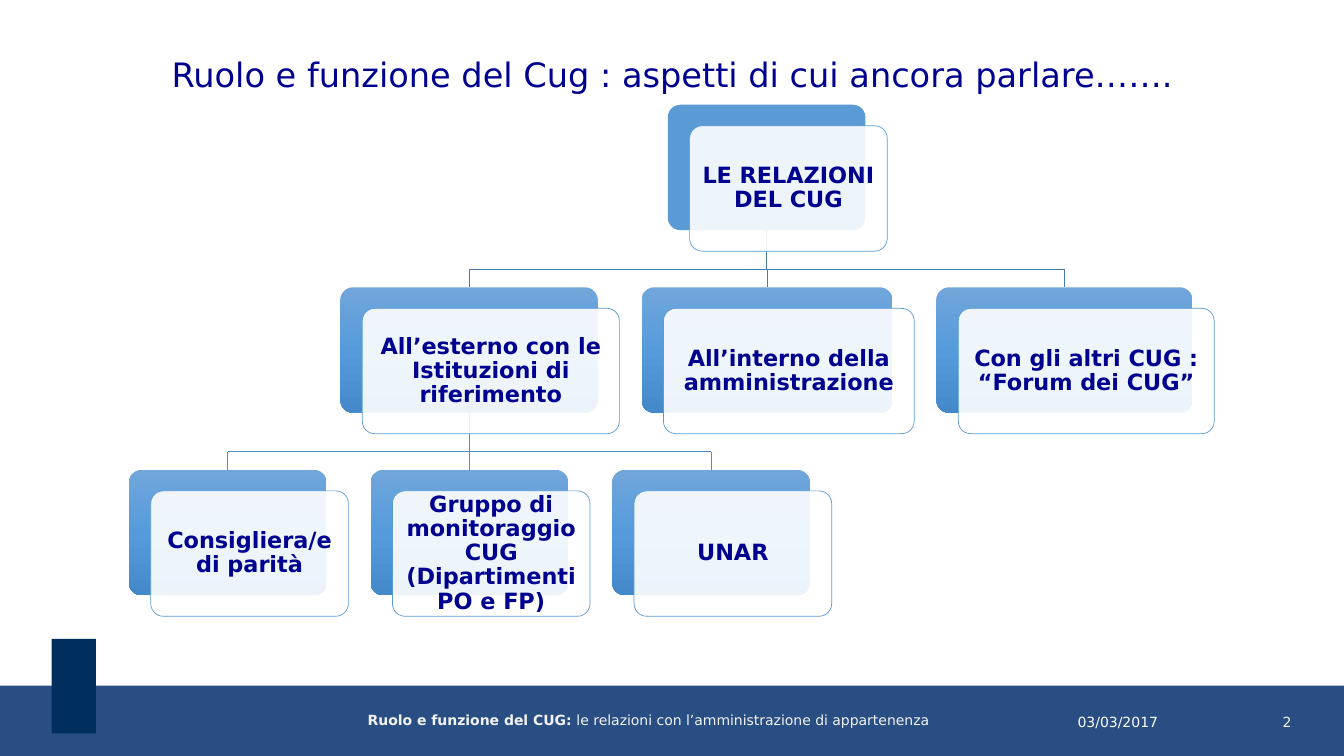
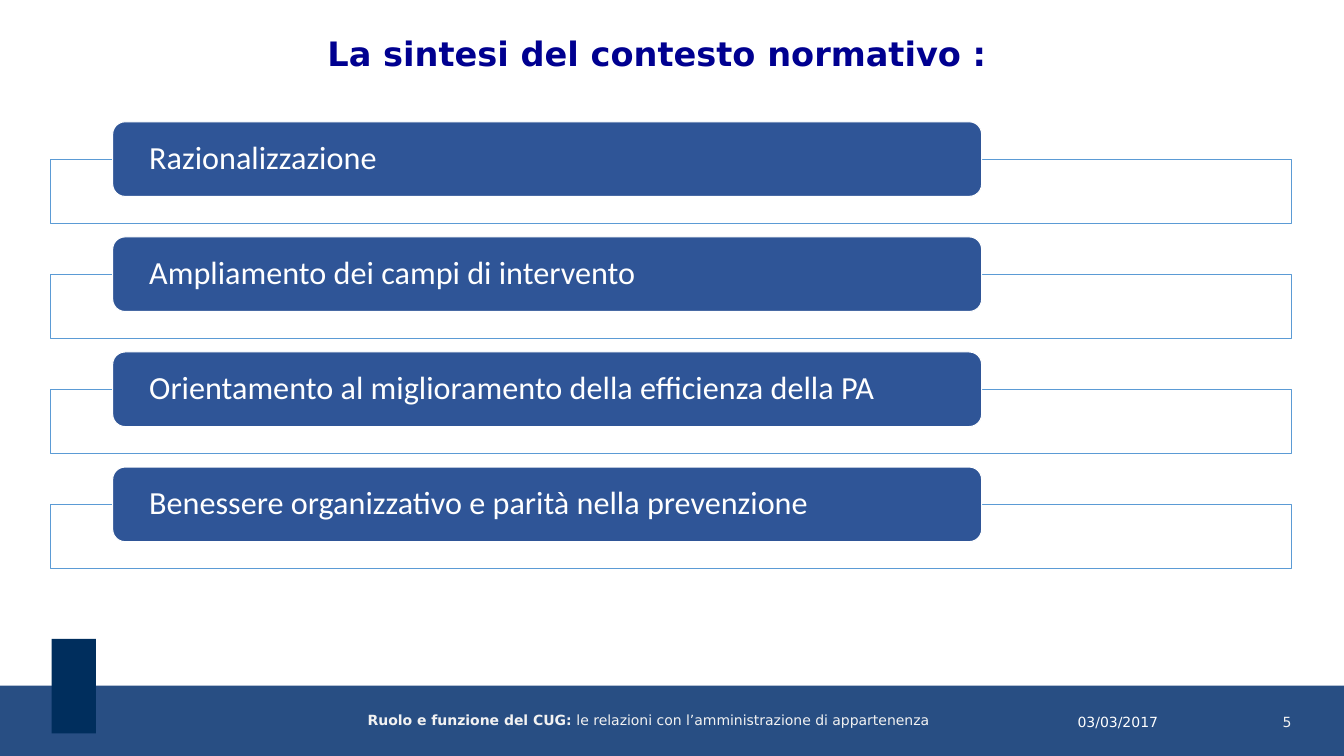
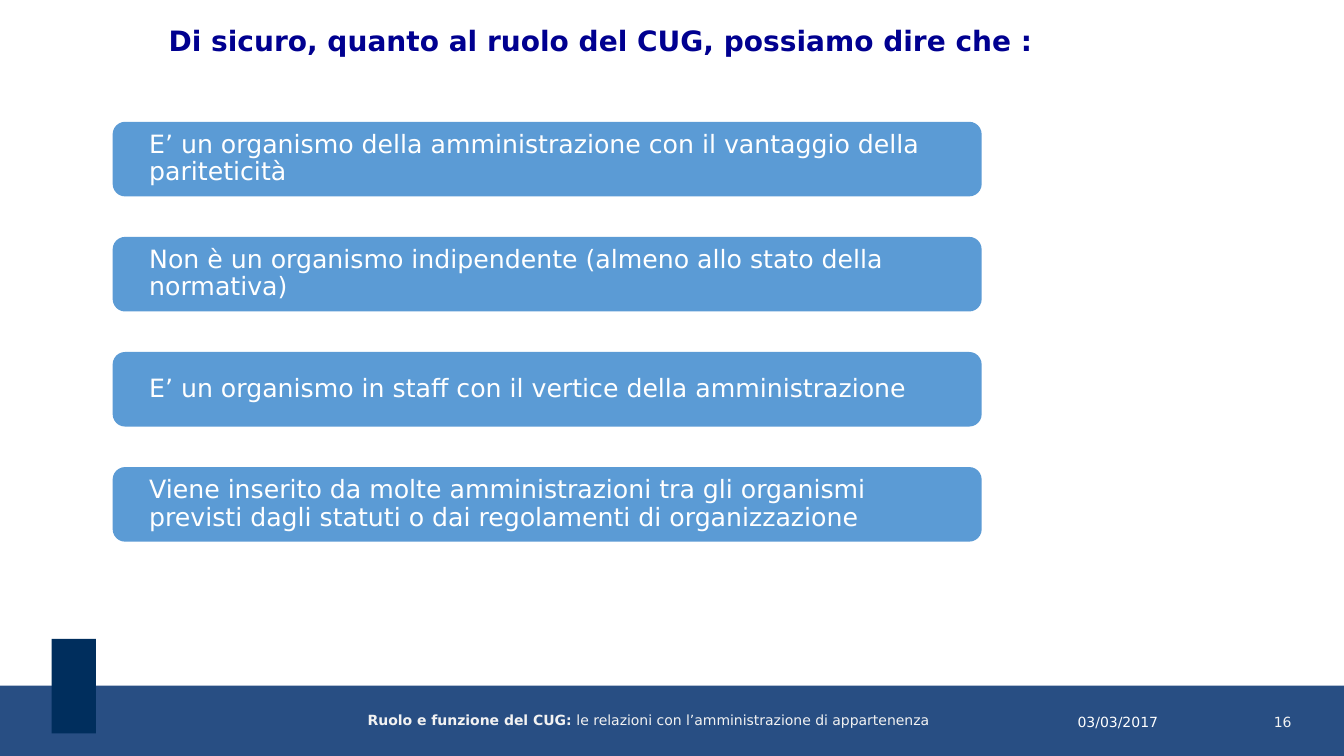
from copy import deepcopy
from dataclasses import dataclass

from lxml import etree
from pptx import Presentation
from pptx.dml.color import RGBColor
from pptx.enum.shapes import MSO_CONNECTOR, MSO_SHAPE
from pptx.enum.text import MSO_ANCHOR, MSO_AUTO_SIZE, PP_ALIGN
from pptx.oxml.ns import qn
from pptx.util import Cm, Pt

RECTANGLE, ROUNDED = MSO_SHAPE.RECTANGLE, MSO_SHAPE.ROUNDED_RECTANGLE
STRAIGHT = MSO_CONNECTOR.STRAIGHT
LEFT, CENTER, RIGHT = PP_ALIGN.LEFT, PP_ALIGN.CENTER, PP_ALIGN.RIGHT
TOP, MIDDLE = MSO_ANCHOR.TOP, MSO_ANCHOR.MIDDLE
NO_AUTOFIT = MSO_AUTO_SIZE.NONE

COLORS = {
    "band": "284E83",
    "marker": "002E5D",
    "title": "000090",
    "footer": "F2F2F2",
    "white": "FFFFFF",
    "blue": "5B9BD5",
    "navy": "2F5597",
    "upper_line": "497CAB",
    "lower_line": "538DC1",
    "card_top": "71A6DB",
    "card_middle": "559BDB",
    "card_bottom": "448ACA",
}
CARD_GRADIENT = ("card_top", "card_middle", "card_bottom")
FONT = "DejaVu Sans"

# Organisation chart, in centimetres
CHART_TOP, LEVEL_PITCH = 2.64, 4.6
CARD_HEIGHT, CARD_GAP, CARD_INSET = 3.16, 1.11, 0.16
CARD_SHIFT_X, CARD_SHIFT_Y = 0.55, 0.53
ELBOW_DROP = 0.98

# Bar list, in centimetres
BAR_LEFT, BAR_TOP, BAR_WIDTH, BAR_HEIGHT, BAR_PITCH = 2.84, 3.07, 21.9, 1.88, 2.9
BAR_INSET = 0.83
FRAME_LEFT, FRAME_SHIFT, FRAME_WIDTH, FRAME_HEIGHT = 1.27, 0.94, 31.27, 1.61


@dataclass(frozen=True)
class Box:
    left: float
    top: float
    width: float
    height: float

    @property
    def center(self) -> float:
        return self.left + self.width / 2

    @property
    def bottom(self) -> float:
        return self.top + self.height

    def lengths(self) -> tuple:
        return Cm(self.left), Cm(self.top), Cm(self.width), Cm(self.height)


@dataclass(frozen=True)
class Title:
    text: str
    box: Box
    size: int
    bold: bool = True
    top_inset: float = 0


@dataclass(frozen=True)
class Card:
    text: str
    width: float


@dataclass(frozen=True)
class BarStyle:
    fill: str
    font: str
    size: int
    outlined: bool


LEVELS = (
    (16.83, (Card("LE RELAZIONI DEL CUG", 4.98),)),
    (8.58, (
        Card("All’esterno con le Istituzioni di riferimento", 6.48),
        Card("All’interno della amministrazione", 6.32),
        Card("Con gli altri CUG : “Forum dei CUG”", 6.45),
    )),
    (3.25, (
        Card("Consigliera/e di parità", 4.98),
        Card("Gruppo di monitoraggio CUG (Dipartimenti PO e FP)", 4.98),
        Card("UNAR", 4.98),
    )),
)
CONTEXT = (
    "Razionalizzazione",
    "Ampliamento dei campi di intervento",
    "Orientamento al miglioramento della efficienza della PA",
    "Benessere organizzativo e parità nella prevenzione",
)
ROLE = (
    "E’ un organismo della amministrazione con il vantaggio della pariteticità",
    "Non è un organismo indipendente (almeno allo stato della normativa)",
    "E’ un organismo in staff con il vertice della amministrazione",
    "Viene inserito da molte amministrazioni tra gli organismi previsti dagli "
    "statuti o dai regolamenti di organizzazione",
)


def rgb(name: str) -> RGBColor:
    return RGBColor.from_string(COLORS[name])


def write(shape, text: str, *, size: float, color: str, font: str = FONT,
          bold: bool = False, align=CENTER, anchor=TOP, side: float = 0,
          top: float = 0, spacing: float = 1) -> None:
    """Append a run to the shape's paragraph and format its frame (insets in cm)."""
    frame = shape.text_frame
    frame.word_wrap = True
    frame.auto_size = NO_AUTOFIT
    frame.vertical_anchor = anchor
    frame.margin_left = frame.margin_right = Cm(side)
    frame.margin_top, frame.margin_bottom = Cm(top), 0
    paragraph = frame.paragraphs[0]
    paragraph.alignment = align
    paragraph.line_spacing = spacing
    paragraph.space_before = Pt(0)
    run = paragraph.add_run()
    run.text = text
    run.font.name, run.font.size, run.font.bold = font, Pt(size), bold
    run.font.color.rgb = rgb(color)


def place(shape, box: Box) -> None:
    shape.left, shape.top, shape.width, shape.height = box.lengths()


def add_panel(slide, kind, box: Box, *, fill: str, line: str = "",
              line_width: float = 0.5, opacity: int = 100):
    shape = slide.shapes.add_shape(kind, *box.lengths())
    shape.shadow.inherit = False
    shape.fill.solid()
    shape.fill.fore_color.rgb = rgb(fill)
    if opacity < 100:
        color = shape.element.spPr.find(qn("a:solidFill"))[0]
        etree.SubElement(color, qn("a:alpha"), val=str(opacity * 1000))
    if line:
        shape.line.color.rgb = rgb(line)
        shape.line.width = Pt(line_width)
    else:
        shape.line.fill.background()
    return shape


def apply_card_gradient(shape) -> None:
    shape.fill.gradient()
    shape.fill.gradient_angle = 270
    stop_list = shape.element.spPr.find(qn("a:gradFill")).find(qn("a:gsLst"))
    stop_list.insert(1, deepcopy(stop_list[0]))
    for index, (stop, name) in enumerate(zip(shape.fill.gradient_stops, CARD_GRADIENT)):
        stop.color.rgb = rgb(name)
        stop.position = index / 2


def add_line(slide, x1: float, y1: float, x2: float, y2: float, color: str) -> None:
    line = slide.shapes.add_connector(STRAIGHT, Cm(x1), Cm(y1), Cm(x2), Cm(y2))
    line.line.color.rgb = rgb(color)
    line.line.width = Pt(0.5)
    etree.SubElement(line.element.spPr, qn("a:effectLst"))


def add_bands_to_layout(slide) -> None:
    """Draw the bottom band and its marker, then move them to the slide's layout."""
    bands = (("band", Box(0, 17.28, 33.87, 1.77)), ("marker", Box(1.3, 16.1, 1.12, 2.38)))
    for index, (name, box) in enumerate(bands):
        band = add_panel(slide, RECTANGLE, box, fill=name)
        band.element.nvSpPr.cNvPr.set("id", str(20 + index))
        slide.slide_layout.shapes.element.insert(2 + index, band.element)


def add_slide(presentation, title: Title, number: int):
    """Add a slide with its title, footer, date and number."""
    slide = presentation.slides.add_slide(presentation.slide_layouts[1])
    place(slide.shapes.title, title.box)
    write(slide.shapes.title, title.text, size=title.size, color="title",
          bold=title.bold, anchor=MIDDLE, top=title.top_inset)

    footer = slide.placeholders[1]
    place(footer, Box(7.5, 17.98, 17.68, 0.64))
    properties = footer.text_frame.paragraphs[0]._p.get_or_add_pPr()
    properties.set("marL", "0")
    properties.set("indent", "0")
    etree.SubElement(properties, qn("a:buNone"))
    for text, bold in (("Ruolo e funzione del CUG: ", True),
                       ("le relazioni con l’amministrazione di appartenenza", False)):
        write(footer, text, size=10, color="footer", bold=bold, spacing=0.9)

    for text, left, color, align in (("03/03/2017", 26.16, "white", CENTER),
                                     (str(number), 28.53, "footer", RIGHT)):
        label = slide.shapes.add_textbox(*Box(left, 17.98, 4.02, 1.02).lengths())
        write(label, text, size=10, color=color, align=align)
    return slide


def level_boxes(level: int) -> list[Box]:
    left, cards = LEVELS[level]
    boxes = []
    for card in cards:
        boxes.append(Box(left, CHART_TOP + level * LEVEL_PITCH, card.width, CARD_HEIGHT))
        left += card.width + CARD_GAP
    return boxes


def add_branch(slide, parent: Box, children: list[Box], color: str) -> None:
    elbow = parent.bottom + ELBOW_DROP
    add_line(slide, parent.center, parent.bottom, parent.center, elbow, color)
    add_line(slide, children[0].center, elbow, children[-1].center, elbow, color)
    for child in children:
        add_line(slide, child.center, elbow, child.center, child.top, color)


def add_card(slide, box: Box, text: str, gradient: bool) -> None:
    back = add_panel(slide, ROUNDED, box, fill="blue")
    if gradient:
        apply_card_gradient(back)
    front_box = Box(box.left + CARD_SHIFT_X, box.top + CARD_SHIFT_Y, box.width, box.height)
    front = add_panel(slide, ROUNDED, front_box, fill="white", line="blue", opacity=90)
    for shape in (back, front):
        shape.adjustments[0] = 0.1
    write(front, text, size=16, color="title", bold=True, anchor=MIDDLE,
          side=CARD_INSET, spacing=0.9)


def add_organisation_chart(slide) -> None:
    levels = [level_boxes(level) for level in range(len(LEVELS))]
    for parents, children, color in zip(levels, levels[1:], ("upper_line", "lower_line")):
        add_branch(slide, parents[0], children, color)
    for level, boxes in enumerate(levels):
        for box, card in zip(boxes, LEVELS[level][1]):
            add_card(slide, box, card.text, gradient=level > 0)


def add_bar_list(slide, texts: tuple[str, ...], style: BarStyle) -> None:
    for index, text in enumerate(texts):
        top = BAR_TOP + index * BAR_PITCH
        if style.outlined:
            frame = Box(FRAME_LEFT, top + FRAME_SHIFT, FRAME_WIDTH, FRAME_HEIGHT)
            add_panel(slide, RECTANGLE, frame, fill="white", line="blue", opacity=90)
        bar = add_panel(slide, ROUNDED, Box(BAR_LEFT, top, BAR_WIDTH, BAR_HEIGHT),
                        fill=style.fill, line="white" if style.outlined else "",
                        line_width=0.75)
        write(bar, text, size=style.size, color="white", font=style.font, align=LEFT,
              anchor=MIDDLE, side=BAR_INSET, spacing=0.9)


def main() -> None:
    presentation = Presentation()
    presentation.slide_width, presentation.slide_height = Cm(33.87), Cm(19.05)

    relations = add_slide(presentation, Title(
        "Ruolo e funzione del Cug : aspetti di cui ancora parlare…….",
        Box(1.3, 0.71, 31.29, 1.93), 24, bold=False, top_inset=0.4), 2)
    add_bands_to_layout(relations)
    add_organisation_chart(relations)

    context = add_slide(presentation, Title(
        "La sintesi del contesto normativo :", Box(7.92, 0.71, 17.27, 1.27), 24), 5)
    add_bar_list(context, CONTEXT, BarStyle("navy", "Calibri", 23, outlined=True))

    role = add_slide(presentation, Title(
        "Di sicuro, quanto al ruolo del CUG, possiamo dire che :",
        Box(3.71, 0.46, 22.86, 1.12), 20), 16)
    add_bar_list(role, ROLE, BarStyle("blue", FONT, 18, outlined=False))

    presentation.save("out.pptx")


if __name__ == "__main__":
    main()
